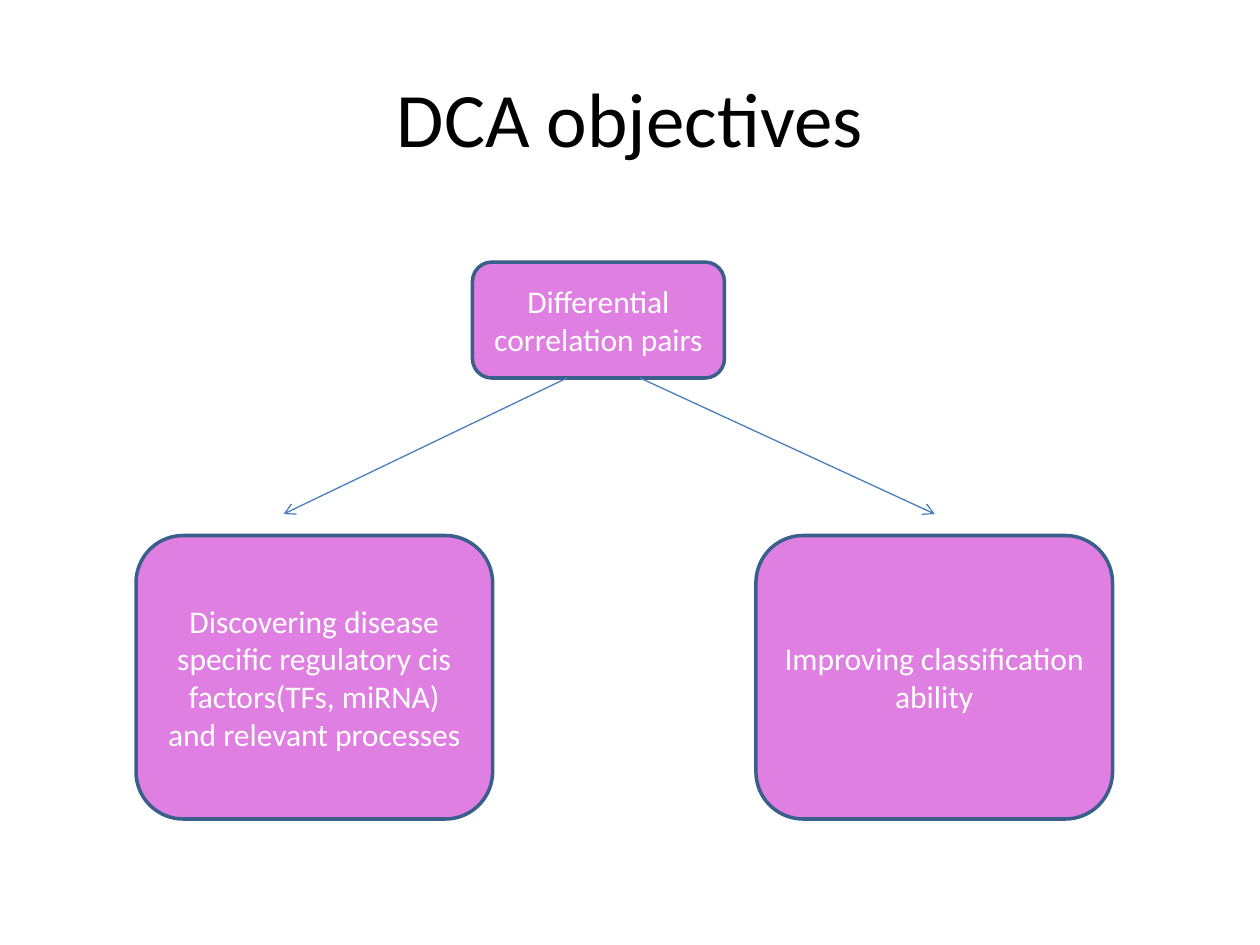
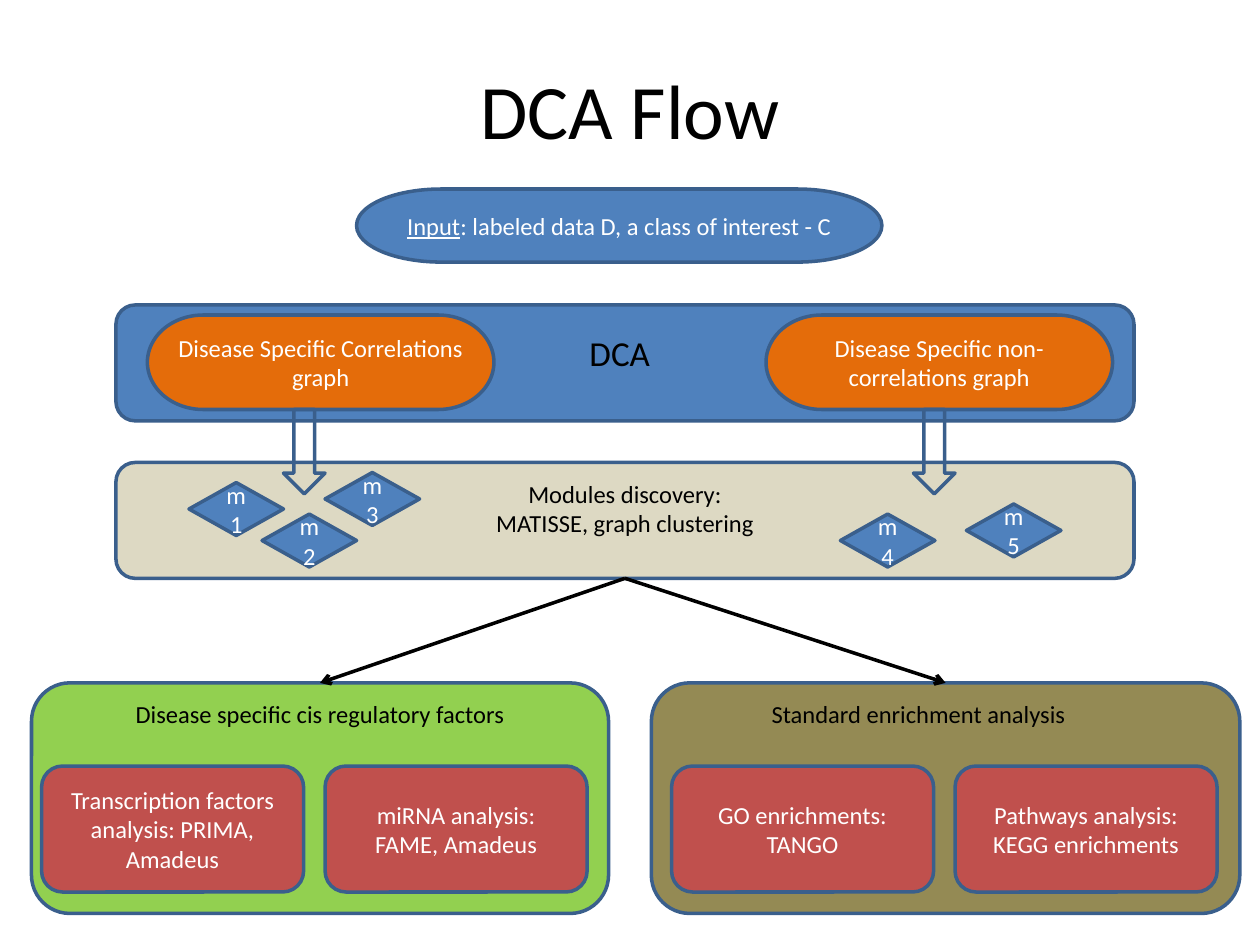
"""Builds the two DCA slides: objectives and flow."""
from dataclasses import dataclass

import pptx
import pptx.dml.color
import pptx.enum.shapes
import pptx.enum.text
import pptx.oxml
import pptx.oxml.ns
import pptx.util
from pptx.util import Inches

SHAPES = pptx.enum.shapes.MSO_SHAPE
ALIGN = pptx.enum.text.PP_ALIGN
ANCHOR = pptx.enum.text.MSO_ANCHOR


@dataclass(frozen=True)
class Theme:
    font: str = "Calibri"
    black: str = "000000"
    white: str = "FFFFFF"
    outline: str = "3A5F8C"
    thin_arrow: str = "4B7EBC"
    blue: str = "4F81BD"
    violet: str = "DF7FE1"
    orange: str = "E46C0A"
    sand: str = "DDD9C3"
    olive: str = "948A54"
    green: str = "92D050"
    red: str = "C0504D"
    title_size: float = 44
    heading_size: float = 20
    objective_size: float = 18
    body_size: float = 14
    line_width: float = 2
    thin_width: float = 0.75


class Deck:
    def __init__(self, theme):
        self.theme = theme
        self.presentation = pptx.Presentation()
        self.presentation.slide_width = Inches(10)
        self.presentation.slide_height = Inches(7.5)
        self.slide = None

    def add_slide(self, title, title_height):
        self.slide = self.presentation.slides.add_slide(self.presentation.slide_layouts[6])
        self.label(title, 0.5, 0.3, 9, title_height, self.theme.title_size, anchor=ANCHOR.MIDDLE)

    def color(self, value):
        return pptx.dml.color.RGBColor.from_string(value)

    def fill_text(self, shape, text, size, color, align, anchor):
        text_frame = shape.text_frame
        text_frame.text = text
        text_frame.word_wrap = True
        text_frame.vertical_anchor = anchor
        for paragraph in text_frame.paragraphs:
            paragraph.alignment = align
            for run in paragraph.runs:
                self.format_run(run, size, color)

    def format_run(self, run, size, color):
        run.font.name = self.theme.font
        run.font.size = pptx.util.Pt(size)
        run.font.color.rgb = self.color(color)

    def label(self, text, left, top, width, height, size=None, align=ALIGN.CENTER, anchor=ANCHOR.TOP):
        box = self.slide.shapes.add_textbox(Inches(left), Inches(top), Inches(width), Inches(height))
        self.fill_text(box, text, size or self.theme.body_size, self.theme.black, align, anchor)

    def box(self, kind, left, top, width, height, fill=None, text="", size=None):
        shape = self.slide.shapes.add_shape(
            kind, Inches(left), Inches(top), Inches(width), Inches(height))
        shape.shadow.inherit = False
        if fill:
            shape.fill.solid()
            shape.fill.fore_color.rgb = self.color(fill)
        else:
            shape.fill.background()
        shape.line.color.rgb = self.color(self.theme.outline)
        shape.line.width = pptx.util.Pt(self.theme.line_width)
        if text:
            self.fill_text(shape, text, size or self.theme.body_size, self.theme.white,
                           ALIGN.CENTER, ANCHOR.MIDDLE)
        return shape

    def underline_lead(self, shape, lead):
        paragraph = shape.text_frame.paragraphs[0]
        first = paragraph.runs[0]
        rest = paragraph.add_run()
        rest.text = first.text[len(lead):]
        first.text = lead
        first.font.underline = True
        self.format_run(rest, self.theme.body_size, self.theme.white)

    def arrow(self, start, end, color, width):
        connector = self.slide.shapes.add_connector(
            pptx.enum.shapes.MSO_CONNECTOR.STRAIGHT, *map(Inches, start + end))
        connector.line.color.rgb = self.color(color)
        connector.line.width = pptx.util.Pt(width)
        namespace = pptx.oxml.ns.nsdecls("a")
        head = pptx.oxml.parse_xml(f'<a:tailEnd {namespace} type="arrow"/>')
        connector.get_or_add_ln().append(head)
        connector.element.spPr.append(pptx.oxml.parse_xml(f"<a:effectLst {namespace}/>"))
        return connector

    def joined_arrow(self, source, target):
        connector = self.arrow((0, 0), (1, 1), self.theme.black, self.theme.line_width)
        connector.begin_connect(source, 2)
        connector.end_connect(target, 0)


def build_objectives(deck):
    theme = deck.theme
    deck.add_slide("DCA objectives", 1.25)
    process = SHAPES.FLOWCHART_ALTERNATE_PROCESS
    deck.box(process, 3.75, 2.08, 2, 0.92, theme.violet,
             "Differential correlation pairs", theme.objective_size)
    for start_x, end_x in ((5.08, 7.42), (4.5, 2.25)):
        deck.arrow((start_x, 3), (end_x, 4.08), theme.thin_arrow, theme.thin_width)
    objectives = (
        (6, "Improving classification ability"),
        (1.08, "Discovering disease specific regulatory cis factors(TFs, miRNA) "
               "and relevant processes"),
    )
    for left, text in objectives:
        deck.box(process, left, 4.25, 2.83, 2.25, theme.violet, text, theme.objective_size)


def build_flow(deck):
    theme = deck.theme
    deck.add_slide("DCA Flow", 1.12)
    process = SHAPES.FLOWCHART_ALTERNATE_PROCESS
    terminator = SHAPES.FLOWCHART_TERMINATOR

    data_input = deck.box(terminator, 2.83, 1.5, 4.17, 0.58, theme.blue,
                          "Input: labeled data D, a class of interest - C")
    deck.underline_lead(data_input, "Input")

    deck.box(process, 0.92, 2.42, 8.08, 0.92, theme.blue)
    modules_band = deck.box(process, 0.92, 3.67, 8.08, 0.92, theme.sand)
    graphs = (
        (1.17, 2.25, "Disease Specific Correlations graph"),
        (6.08, 7.25, "Disease Specific non-correlations graph"),
    )
    for graph_left, arrow_left, text in graphs:
        deck.box(terminator, graph_left, 2.5, 2.75, 0.75, theme.orange, text)
        deck.box(SHAPES.DOWN_ARROW, arrow_left, 3.25, 0.33, 0.67)
    deck.label("DCA", 4.58, 2.58, 1.08, 0.44, theme.heading_size, ALIGN.LEFT)

    modules = ((1.5, 3.83), (2.08, 4.08), (2.58, 3.75), (6.67, 4.08), (7.67, 4))
    for number, (left, top) in enumerate(modules, start=1):
        deck.box(SHAPES.FLOWCHART_DECISION, left, top, 0.75, 0.42, theme.blue, f"m{number}")
    deck.label("Modules discovery:\nMATISSE, graph clustering", 3.42, 3.75, 3.08, 0.57)

    panels = (
        (0.25, 4.58, theme.green, 0.5, "Disease specific cis regulatory factors", 0.33,
         ("Transcription factors analysis: PRIMA, Amadeus", "miRNA analysis: FAME, Amadeus")),
        (5.17, 4.67, theme.olive, 5.25, "Standard enrichment analysis", 5.33,
         ("GO enrichments:\nTANGO", "Pathways analysis:\nKEGG enrichments")),
    )
    for left, width, fill, heading_left, heading, first_left, analyses in panels:
        panel = deck.box(process, left, 5.42, width, 1.83, fill)
        deck.label(heading, heading_left, 5.5, 4.08, 0.34)
        for column, text in enumerate(analyses):
            deck.box(SHAPES.ROUNDED_RECTANGLE, first_left + 2.25 * column, 6.08, 2.08, 1,
                     theme.red, text)
        deck.joined_arrow(modules_band, panel)


def main():
    deck = Deck(Theme())
    build_objectives(deck)
    build_flow(deck)
    deck.presentation.save("out.pptx")


if __name__ == "__main__":
    main()
